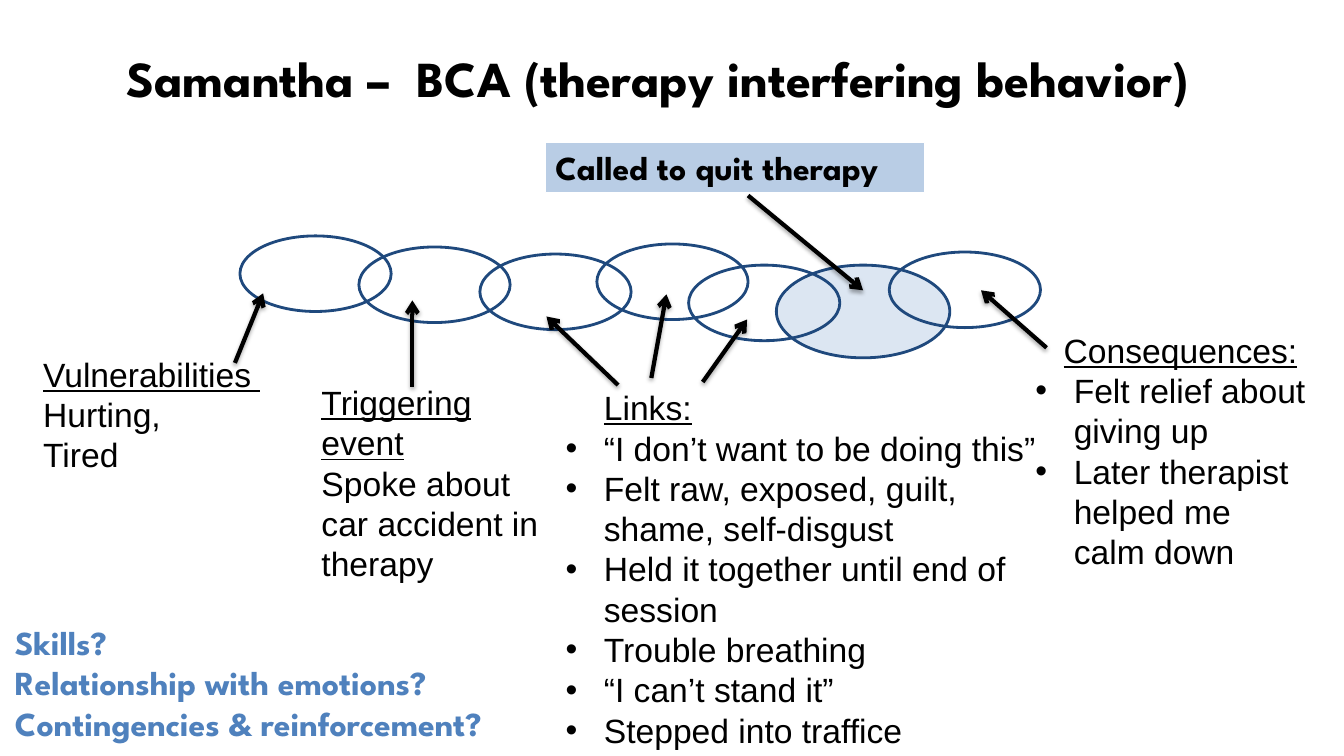
from dataclasses import dataclass

import pptx
import pptx.dml.color
import pptx.enum.shapes
import pptx.enum.text
import pptx.oxml
import pptx.oxml.ns
import pptx.util

Inches = pptx.util.Inches
Pt = pptx.util.Pt
Anchor = pptx.enum.text.MSO_ANCHOR
Align = pptx.enum.text.PP_ALIGN
ShapeType = pptx.enum.shapes.MSO_SHAPE

BLACK, WHITE, NAVY, BLUE = "000000", "FFFFFF", "1F497D", "4F81BD"
HEADING_FONT, BODY_FONT = "League Spartan", "Arial"
BULLET_INDENT = 0.38
NAMESPACE = pptx.oxml.ns.nsdecls("a")
SHADOW = (
    f'<a:effectLst {NAMESPACE}><a:outerShdw blurRad="{Pt(3.1)}" dist="{Pt(1.8)}" '
    'dir="5400000" rotWithShape="0"><a:srgbClr val="000000"><a:alpha val="35000"/>'
    "</a:srgbClr></a:outerShdw></a:effectLst>"
)


@dataclass
class Box:
    left: float
    top: float
    width: float
    height: float


@dataclass
class ChainLink:
    left: float
    top: float
    fill: str | None = None
    width: float = 1.5
    height: float = 0.75


@dataclass
class Arrow:
    start: tuple[float, float]
    end: tuple[float, float]


@dataclass
class Note:
    box: Box
    lines: list[str]


@dataclass
class BulletList:
    box: Box
    heading: str
    heading_indent: float
    items: list[str]


@dataclass
class Panel:
    box: Box
    lines: list[str]
    fill: str
    color: str
    outline: str | None = None
    anchor: Anchor = Anchor.TOP


CHAIN = [
    ChainLink(2.38, 2.34, WHITE),
    ChainLink(3.56, 2.45),
    ChainLink(5.92, 2.42, WHITE),
    ChainLink(4.76, 2.52),
    ChainLink(7.7, 2.63, "DCE6F2", 1.72, 0.92),
    ChainLink(8.82, 2.5),
    ChainLink(6.83, 2.63),
]
ARROWS = [
    Arrow((2.33, 3.6), (2.61, 2.91)),
    Arrow((4.09, 3.84), (4.09, 2.98)),
    Arrow((6.13, 3.82), (5.42, 3.14)),
    Arrow((6.46, 3.75), (6.61, 2.92)),
    Arrow((6.97, 3.79), (7.41, 3.17)),
    Arrow((10.38, 3.45), (9.73, 2.88)),
    Arrow((7.42, 1.94), (8.56, 2.88)),
]
NOTES = [
    Note(Box(0.33, 3.46, 2.4, 1.31), ["Vulnerabilities ", "Hurting,", "Tired"]),
    Note(Box(3.09, 3.74, 2.35, 2.12), ["Triggering event", "Spoke about car accident in therapy"]),
]
BULLET_LISTS = [
    BulletList(Box(5.51, 3.79, 5.06, 3.74), "Links:", BULLET_INDENT, [
        "“I don’t want to be doing this”",
        "Felt raw, exposed, guilt, shame, self-disgust",
        "Held it together until end of session",
        "Trouble breathing",
        "“I can’t stand it”",
        "Stepped into traffice",
    ]),
    BulletList(Box(10.17, 3.22, 2.91, 3.18), "Consequences:", 0.28, [
        "Felt relief about giving up",
        "Later therapist helped me calm down",
    ]),
]
PANELS = [
    Panel(Box(5.41, 1.41, 3.76, 0.5), ["Called to quit therapy"], "B9CDE5", BLACK, WHITE, Anchor.MIDDLE),
    Panel(Box(0.05, 6.12, 5.46, 1.31),
          ["Skills?", "Relationship with emotions?", "Contingencies & reinforcement?"], WHITE, BLUE),
]


def rgb(value: str):
    return pptx.dml.color.RGBColor.from_string(value)


def lengths(box: Box | ChainLink) -> list:
    return [Inches(value) for value in (box.left, box.top, box.width, box.height)]


def place(shape, box: Box) -> None:
    shape.left, shape.top, shape.width, shape.height = lengths(box)


def write(shape, lines: list[str], font: str, color: str, size: int = 24,
          bold: bool = False, align=Align.LEFT, anchor=Anchor.TOP) -> None:
    frame = shape.text_frame
    frame.text = "\n".join(lines)
    frame.word_wrap = True
    frame.auto_size = pptx.enum.text.MSO_AUTO_SIZE.NONE
    frame.vertical_anchor = anchor
    for paragraph in frame.paragraphs:
        paragraph.alignment = align
        paragraph.space_before = Pt(0)
        for run in paragraph.runs:
            run.font.name = font
            run.font.size = Pt(size)
            run.font.bold = bold
            run.font.color.rgb = rgb(color)


def underline_heading(shape) -> None:
    shape.text_frame.paragraphs[0].runs[0].font.underline = True


def set_bullet(paragraph, margin: float, indent: float, bullet: str) -> None:
    properties = paragraph._p.get_or_add_pPr()
    properties.set("marL", str(Inches(margin)))
    properties.set("indent", str(Inches(indent)))
    properties.append(pptx.oxml.parse_xml(bullet))


def paint(shape, fill: str | None, outline: str | None, width: float) -> None:
    shape.shadow.inherit = False
    if fill:
        shape.fill.solid()
        shape.fill.fore_color.rgb = rgb(fill)
    else:
        shape.fill.background()
    if outline:
        shape.line.color.rgb = rgb(outline)
        shape.line.width = Pt(width)
    else:
        shape.line.fill.background()


def draw_link(slide, link: ChainLink) -> None:
    shape = slide.shapes.add_shape(ShapeType.OVAL, *lengths(link))
    paint(shape, link.fill, NAVY, 2)


def draw_arrow(slide, arrow: Arrow) -> None:
    points = [Inches(value) for value in arrow.start + arrow.end]
    connector = slide.shapes.add_connector(pptx.enum.shapes.MSO_CONNECTOR.STRAIGHT, *points)
    connector.line.color.rgb = rgb(BLACK)
    connector.line.width = Pt(3)
    connector.line._get_or_add_ln().append(pptx.oxml.parse_xml(f'<a:tailEnd {NAMESPACE} type="arrow"/>'))
    connector._element.spPr.append(pptx.oxml.parse_xml(SHADOW))


def draw_note(slide, note: Note) -> None:
    shape = slide.shapes.add_textbox(*lengths(note.box))
    write(shape, note.lines, BODY_FONT, BLACK)
    underline_heading(shape)


def fill_list(placeholder, content: BulletList) -> None:
    place(placeholder, content.box)
    write(placeholder, [content.heading, *content.items], BODY_FONT, BLACK)
    underline_heading(placeholder)
    heading, *items = placeholder.text_frame.paragraphs
    set_bullet(heading, content.heading_indent, 0, f"<a:buNone {NAMESPACE}/>")
    for item in items:
        set_bullet(item, BULLET_INDENT, -BULLET_INDENT, f'<a:buChar {NAMESPACE} char="•"/>')


def draw_panel(slide, panel: Panel) -> None:
    shape = slide.shapes.add_shape(ShapeType.RECTANGLE, *lengths(panel.box))
    paint(shape, panel.fill, panel.outline, 0.75)
    write(shape, panel.lines, HEADING_FONT, panel.color, bold=True, anchor=panel.anchor)


def main() -> None:
    presentation = pptx.Presentation()
    presentation.slide_width, presentation.slide_height = Inches(13.33), Inches(7.5)
    slide = presentation.slides.add_slide(presentation.slide_layouts.get_by_name("Two Content"))
    title, *bodies = slide.placeholders
    place(title, Box(0.34, 0.14, 12.37, 1.25))
    write(title, ["Samantha –  BCA (therapy interfering behavior)"], HEADING_FONT, BLACK,
          size=36, bold=True, align=Align.CENTER, anchor=Anchor.MIDDLE)
    for body, content in zip(bodies, BULLET_LISTS):
        fill_list(body, content)
    for draw, elements in ((draw_link, CHAIN), (draw_note, NOTES), (draw_arrow, ARROWS), (draw_panel, PANELS)):
        for element in elements:
            draw(slide, element)
    presentation.save("out.pptx")


if __name__ == "__main__":
    main()
